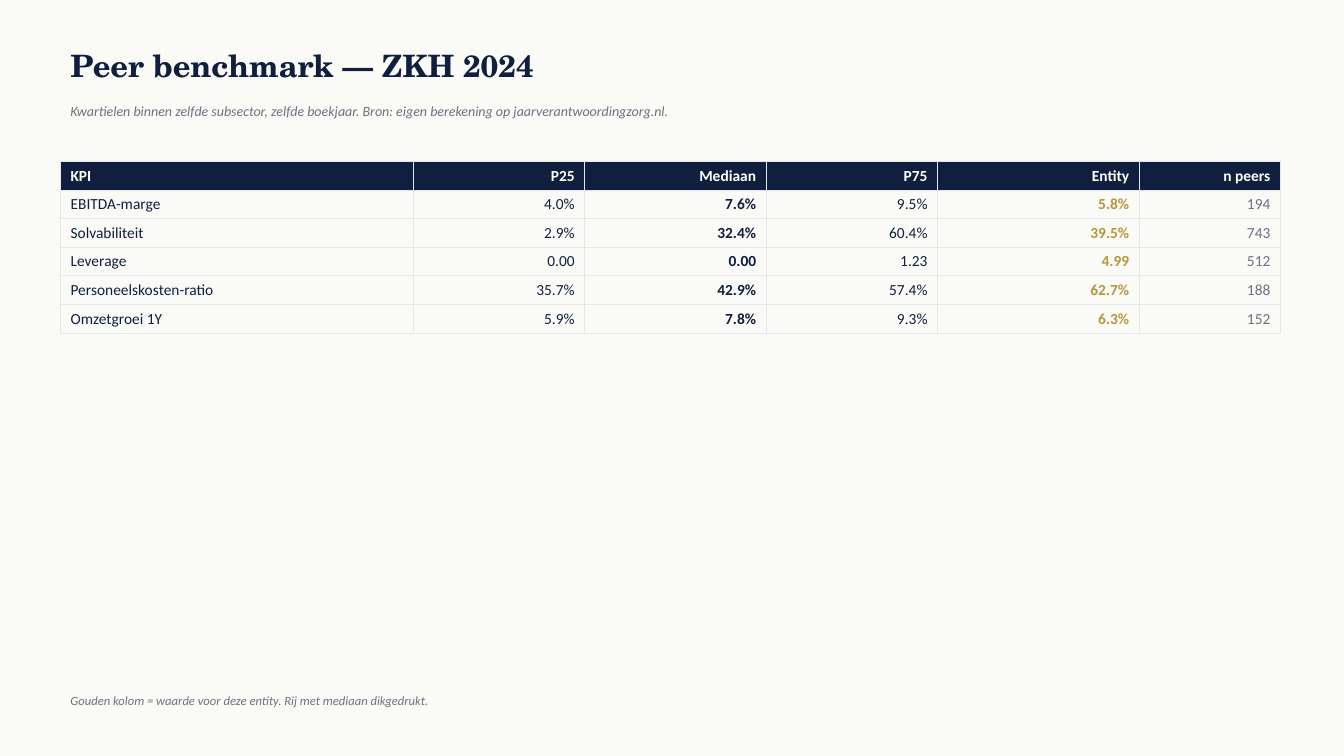
from dataclasses import dataclass

from lxml.etree import SubElement
from pptx import Presentation
from pptx.dml.color import RGBColor
from pptx.enum.text import MSO_ANCHOR, PP_ALIGN
from pptx.oxml.ns import qn
from pptx.slide import Slide
from pptx.table import _Cell
from pptx.text.text import TextFrame
from pptx.util import Inches, Pt

HUES = {
    "paper": "FAFAF7",
    "navy": "0F1F3D",
    "gold": "B8973B",
    "gray": "6B7280",
    "white": "FFFFFF",
    "rule": "E5E7EB",
}
LEFT = 0.6
ROW_HIGH = 0.28


@dataclass(frozen=True)
class Label:
    text: str
    top: float
    high: float
    size: float
    hue: str = "gray"
    font: str = "Calibri"
    bold: bool = False
    slant: bool = True


@dataclass(frozen=True)
class Column:
    head: str
    width: float
    hue: str = "navy"
    bold: bool = False
    align: PP_ALIGN = PP_ALIGN.RIGHT


LABELS = [
    Label("Peer benchmark — ZKH 2024", 0.4, 0.5, 22, hue="navy",
          font="TeX Gyre Schola", bold=True, slant=False),
    Label("Kwartielen binnen zelfde subsector, zelfde boekjaar. "
          "Bron: eigen berekening op jaarverantwoordingzorg.nl.", 0.95, 0.3, 10),
    Label("Gouden kolom = waarde voor deze entity. Rij met mediaan dikgedrukt.",
          6.8, 0.3, 9),
]
COLUMNS = [
    Column("KPI", 3.5, align=PP_ALIGN.LEFT),
    Column("P25", 1.7),
    Column("Mediaan", 1.8, bold=True),
    Column("P75", 1.7),
    Column("Entity", 2, hue="gold", bold=True),
    Column("n peers", 1.4, hue="gray"),
]
ROWS = [
    ("EBITDA-marge", "4.0%", "7.6%", "9.5%", "5.8%", "194"),
    ("Solvabiliteit", "2.9%", "32.4%", "60.4%", "39.5%", "743"),
    ("Leverage", "0.00", "0.00", "1.23", "4.99", "512"),
    ("Personeelskosten-ratio", "35.7%", "42.9%", "57.4%", "62.7%", "188"),
    ("Omzetgroei 1Y", "5.9%", "7.8%", "9.3%", "6.3%", "152"),
]


def tint(name: str) -> RGBColor:
    return RGBColor.from_string(HUES[name])


def write(frame: TextFrame, text: str, *, size: float = 11, hue: str = "navy",
          font: str = "Calibri", bold: bool = False, slant: bool = False,
          align: PP_ALIGN = PP_ALIGN.LEFT) -> None:
    line = frame.paragraphs[0]
    line.alignment = align
    run = line.add_run()
    run.text = text
    run.font.name = font
    run.font.size = Pt(size)
    run.font.bold = bold
    run.font.italic = slant
    run.font.color.rgb = tint(hue)


def edge(cell: _Cell) -> None:
    props = cell._tc.get_or_add_tcPr()
    for side in ("lnL", "lnR", "lnT", "lnB"):
        line = SubElement(props, qn(f"a:{side}"), w=str(Pt(0.5)))
        fill = SubElement(line, qn("a:solidFill"))
        SubElement(fill, qn("a:srgbClr"), val=HUES["rule"])


def add_label(slide: Slide, label: Label) -> None:
    box = slide.shapes.add_textbox(Inches(LEFT), Inches(label.top),
                                   Inches(12), Inches(label.high))
    frame = box.text_frame
    frame.word_wrap = True
    frame.vertical_anchor = MSO_ANCHOR.MIDDLE
    write(frame, label.text, size=label.size, hue=label.hue, font=label.font,
          bold=label.bold, slant=label.slant)


def add_grid(slide: Slide) -> None:
    lines = [tuple(col.head for col in COLUMNS), *ROWS]
    width = sum(col.width for col in COLUMNS)
    grid = slide.shapes.add_table(
        len(lines), len(COLUMNS), Inches(LEFT), Inches(1.6),
        Inches(width), Inches(ROW_HIGH * len(lines))).table
    for x, col in enumerate(COLUMNS):
        grid.columns[x].width = Inches(col.width)
        for y, line in enumerate(lines):
            cell = grid.cell(y, x)
            top = y == 0
            edge(cell)
            if top:
                cell.fill.solid()
                cell.fill.fore_color.rgb = tint("navy")
            else:
                cell.fill.background()
            write(cell.text_frame, line[x], hue="white" if top else col.hue,
                  bold=top or col.bold, align=col.align)


def main() -> None:
    deck = Presentation()
    deck.slide_width = Inches(13.33)
    deck.slide_height = Inches(7.5)
    slide = deck.slides.add_slide(deck.slide_layouts[6])
    slide.background.fill.solid()
    slide.background.fill.fore_color.rgb = tint("paper")
    for label in LABELS:
        add_label(slide, label)
    add_grid(slide)
    deck.save("out.pptx")


if __name__ == "__main__":
    main()
